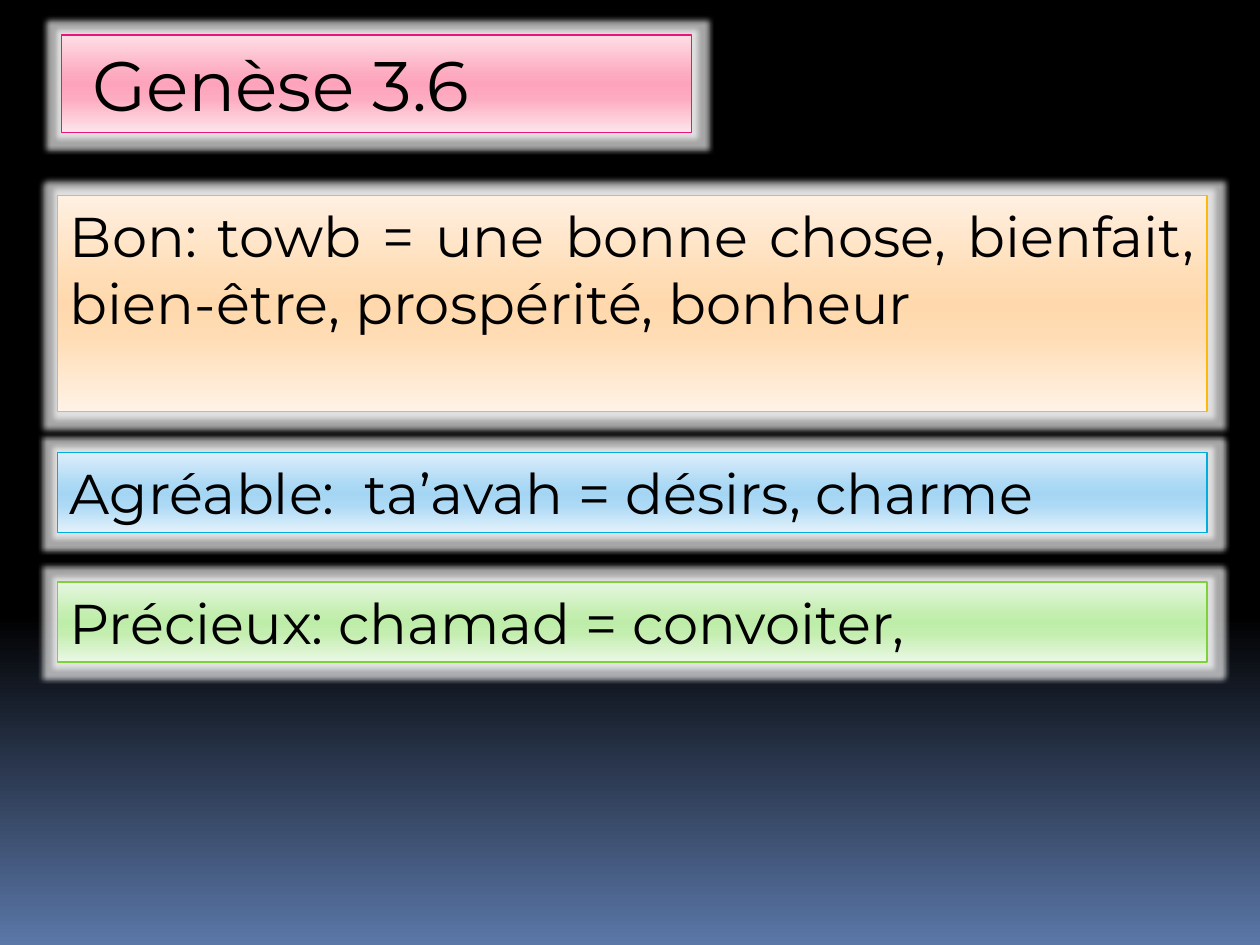
from lxml import etree
from pptx import Presentation
from pptx.dml.color import RGBColor
from pptx.enum.shapes import MSO_SHAPE
from pptx.enum.text import MSO_ANCHOR, MSO_AUTO_SIZE, PP_ALIGN
from pptx.oxml.ns import qn
from pptx.util import Cm, Pt

RECT = MSO_SHAPE.RECTANGLE
LEFT, JUST = PP_ALIGN.LEFT, PP_ALIGN.JUSTIFY

COLORS = {"text": "000000", "glow": "FFFFFF", "pink": "EA157A",
          "orange": "FEB80A", "blue": "00ADDC", "green": "7FD13B"}
SHADES = {
    "pink": ["FDDEE5", "FDABC0", "FDA3BB", "FDABC0", "FDE5EB"],
    "orange": ["FFF0E1", "FFDCB4", "FFD9AD", "FFDCB4", "FFF3E7"],
    "blue": ["DEEEFA", "ACD9F5", "A4D6F4", "ACD9F5", "E5F2FB"],
    "green": ["E6F7E0", "C4EEB0", "BEEDA9", "C4EEB0", "ECF8E6"],
}
STOPS = [0, 40, 50, 65, 100]
NIGHT = [(0, "000000"), (65, "000000"), (100, "5B77A8")]

# text, hue, (left, top, width, height) in cm, size, alignment
BOXES = [
    (" Genèse 3.6", "pink", (1.24, 0.71, 12.7, 1.96), 40, LEFT),
    ("Bon: towb = une bonne chose, bienfait, bien-être, prospérité, bonheur",
     "orange", (1.16, 3.94, 23.18, 4.36), 32, JUST),
    ("Agréable:  ta’avah = désirs, charme",
     "blue", (1.16, 9.12, 23.18, 1.62), 32, JUST),
    ("Précieux: chamad = convoiter,",
     "green", (1.16, 11.73, 23.18, 1.62), 32, JUST),
]
FRAME = {"word_wrap": True, "auto_size": MSO_AUTO_SIZE.NONE,
         "vertical_anchor": MSO_ANCHOR.TOP}


def shade(fill, root, stops):
    """Fill from top to bottom with any number of colour stops."""
    fill.gradient()
    fill.gradient_angle = 270
    ramp = root.xpath(".//a:gsLst")[0]
    for old in list(ramp):
        ramp.remove(old)
    for pos, tone in stops:
        stop = etree.SubElement(ramp, qn("a:gs"), pos=str(pos * 1000))
        etree.SubElement(stop, qn("a:srgbClr"), val=tone)


def glow(shape):
    shape.shadow.inherit = False
    effects = shape._element.spPr.find(qn("a:effectLst"))
    halo = etree.SubElement(effects, qn("a:glow"), rad=str(Pt(6)))
    tone = etree.SubElement(halo, qn("a:srgbClr"), val=COLORS["glow"])
    etree.SubElement(tone, qn("a:alpha"), val="65000")


def add_box(slide, text, hue, place, size, align):
    box = slide.shapes.add_shape(RECT, *map(Cm, place))
    shade(box.fill, box._element, zip(STOPS, SHADES[hue]))
    box.line.color.rgb = RGBColor.from_string(COLORS[hue])
    box.line.width = Pt(0.94)
    glow(box)
    frame = box.text_frame
    for name, value in FRAME.items():
        setattr(frame, name, value)
    para = frame.paragraphs[0]
    para.alignment = align
    run = para.add_run()
    run.text = text
    for name, value in {"name": "Montserrat", "size": Pt(size)}.items():
        setattr(run.font, name, value)
    run.font.color.rgb = RGBColor.from_string(COLORS["text"])


def main():
    deck = Presentation()
    deck.slide_width, deck.slide_height = Cm(25.4), Cm(19.05)
    slide = deck.slides.add_slide(deck.slide_layouts[6])
    shade(slide.background.fill, slide._element, NIGHT)
    for box in BOXES:
        add_box(slide, *box)
    deck.save("out.pptx")


if __name__ == "__main__":
    main()
